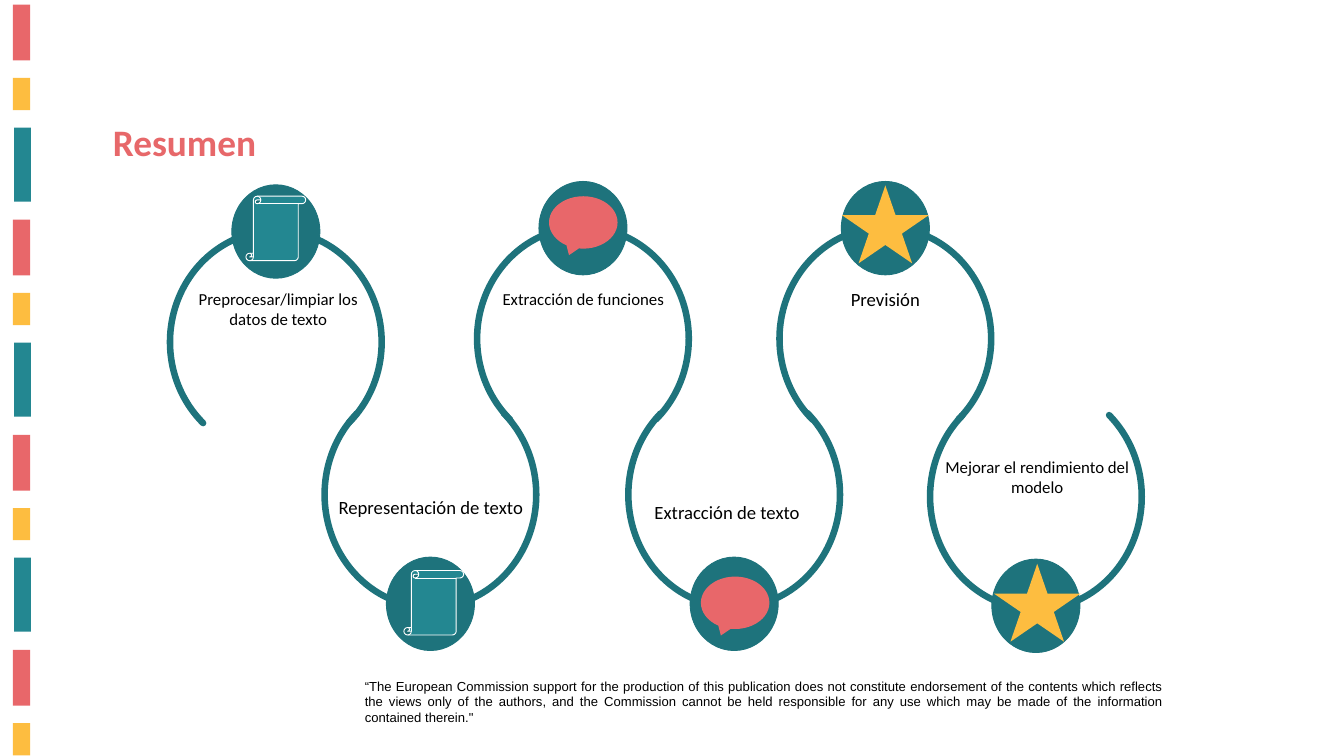
from dataclasses import dataclass

import pptx
import pptx.dml.color
import pptx.enum.shapes
import pptx.enum.text
import pptx.util
from pptx.util import Inches

Kind = pptx.enum.shapes.MSO_SHAPE
Align = pptx.enum.text.PP_ALIGN

COLORS = {
    "red": "E8676A",
    "title": "E7686A",
    "gold": "FDBD40",
    "teal": "238791",
    "deep": "1E737C",
    "white": "FFFFFF",
    "black": "000000",
}


@dataclass(frozen=True)
class Box:
    left: float
    top: float
    width: float
    height: float

    def lengths(self) -> list:
        return [Inches(n) for n in (self.left, self.top, self.width, self.height)]


@dataclass(frozen=True)
class Icon:
    kind: Kind
    fill: str
    width: float
    height: float
    line: str | None = None


@dataclass(frozen=True)
class Stop:
    """One bend of the road; a low bend opens upward."""
    text: str
    size: int
    label: Box
    left: float
    top: float
    low: bool
    icon: Icon
    spot: tuple[float, float]


@dataclass(frozen=True)
class Stripe:
    color: str
    box: Box


SCROLL = Icon(Kind.VERTICAL_SCROLL, "teal", 0.89, 0.96, "white")
SPEECH = Icon(Kind.OVAL_CALLOUT, "red", 1.02, 0.78)
STAR = Icon(Kind.STAR_5_POINT, "gold", 1.29, 1.16)

STOPS = [
    Stop("Preprocesar/limpiar los datos de texto", 18, Box(2.69, 4.24, 2.9, 0.71),
         2.53, 3.43, False, SCROLL, (3.66, 2.92)),
    Stop("Representación de texto", 20, Box(4.87, 7.33, 3.08, 0.44),
         4.83, 5.68, True, SCROLL, (6.01, 8.49)),
    Stop("Extracción de funciones", 18, Box(7.14, 4.24, 3.08, 0.4),
         7.1, 3.38, False, SPEECH, (8.17, 2.92)),
    Stop("Extracción de texto", 20, Box(9.37, 7.4, 2.9, 0.44),
         9.35, 5.68, True, SPEECH, (10.43, 8.58)),
    Stop("Previsión", 20, Box(11.8, 4.24, 2.75, 0.44),
         11.6, 3.38, False, STAR, (12.53, 2.76)),
    Stop("Mejorar el rendimiento del modelo", 18, Box(13.89, 6.75, 3.09, 0.71),
         13.84, 5.71, True, STAR, (14.79, 8.39)),
]

STRIPES = [
    Stripe("red", Box(0.19, 0.07, 0.26, 0.83)),
    Stripe("gold", Box(0.19, 1.16, 0.26, 0.48)),
    Stripe("teal", Box(0.21, 1.9, 0.25, 1.1)),
]
PERIOD = 3.2
HEIGHT = 11.25

NOTICE = (
    "“The European Commission support for the production of this publication "
    "does not constitute endorsement of the contents which reflects the views "
    "only of the authors, and the Commission cannot be held responsible for any "
    "use which may be made of the information contained therein.\""
)


def color(name: str) -> pptx.dml.color.RGBColor:
    return pptx.dml.color.RGBColor.from_string(COLORS[name])


def draw(slide, kind: Kind, box: Box, fill: str | None,
         line: str | None = None, weight: float = 1):
    shape = slide.shapes.add_shape(kind, *box.lengths())
    shape.shadow.inherit = False
    if fill:
        shape.fill.solid()
        shape.fill.fore_color.rgb = color(fill)
    else:
        shape.fill.background()
    if line:
        shape.line.color.rgb = color(line)
        shape.line.width = pptx.util.Pt(weight)
    else:
        shape.line.fill.background()
    return shape


def write(frame, text: str, size: int, align: Align, face: str = "Calibri",
          ink: str = "black", bold: bool = False) -> None:
    frame.word_wrap = True
    frame.auto_size = pptx.enum.text.MSO_AUTO_SIZE.NONE
    frame.vertical_anchor = pptx.enum.text.MSO_ANCHOR.TOP
    frame.text = text
    para = frame.paragraphs[0]
    para.alignment = align
    para.font.name = face
    para.font.size = pptx.util.Pt(size)
    para.font.bold = bold
    para.font.color.rgb = color(ink)


def label(slide, box: Box, text: str, size: int, align: Align,
          face: str = "Calibri") -> None:
    field = slide.shapes.add_textbox(*box.lengths())
    write(field.text_frame, text, size, align, face)


def border(slide) -> None:
    """Repeat the three stripes down the left edge."""
    for turn in range(4):
        for stripe in STRIPES:
            box = stripe.box
            top = box.top + turn * PERIOD
            if top < HEIGHT:
                draw(slide, Kind.RECTANGLE,
                     Box(box.left, top, box.width, box.height), stripe.color)


def bend(slide, stop: Stop) -> None:
    """Draw the arc of a stop with its disc and icon."""
    tall = 3.36 if stop.low else 3.32
    arc = draw(slide, Kind.ARC, Box(stop.left, stop.top, 3.15, tall),
               None, "deep", 7)
    arc.adjustments[0] = 79.141
    arc.adjustments[1] = 28.684
    arc.rotation = 180 if stop.low else 0
    arc.line._get_or_add_ln().set("cap", "rnd")

    rise = 2.61 if stop.low else -0.68
    draw(slide, Kind.OVAL, Box(stop.left + 0.92, stop.top + rise, 1.31, 1.39),
         "deep", "deep")
    icon = stop.icon
    draw(slide, icon.kind, Box(*stop.spot, icon.width, icon.height),
         icon.fill, icon.line)


def main() -> None:
    deck = pptx.Presentation()
    deck.slide_width = Inches(20)
    deck.slide_height = Inches(HEIGHT)
    slide = deck.slides.add_slide(deck.slide_layouts[5])

    title = slide.shapes.title
    title.left, title.top, title.width, title.height = Box(1.58, 1.72, 6.58, 0.77).lengths()
    write(title.text_frame, "Resumen", 40, Align.LEFT, ink="title", bold=True)

    border(slide)
    label(slide, Box(5.33, 10.04, 12.08, 0.81), NOTICE, 14, Align.JUSTIFY, "Arial")
    for stop in STOPS:
        bend(slide, stop)
    for stop in STOPS:
        label(slide, stop.label, stop.text, stop.size, Align.CENTER)

    deck.save("out.pptx")


if __name__ == "__main__":
    main()
